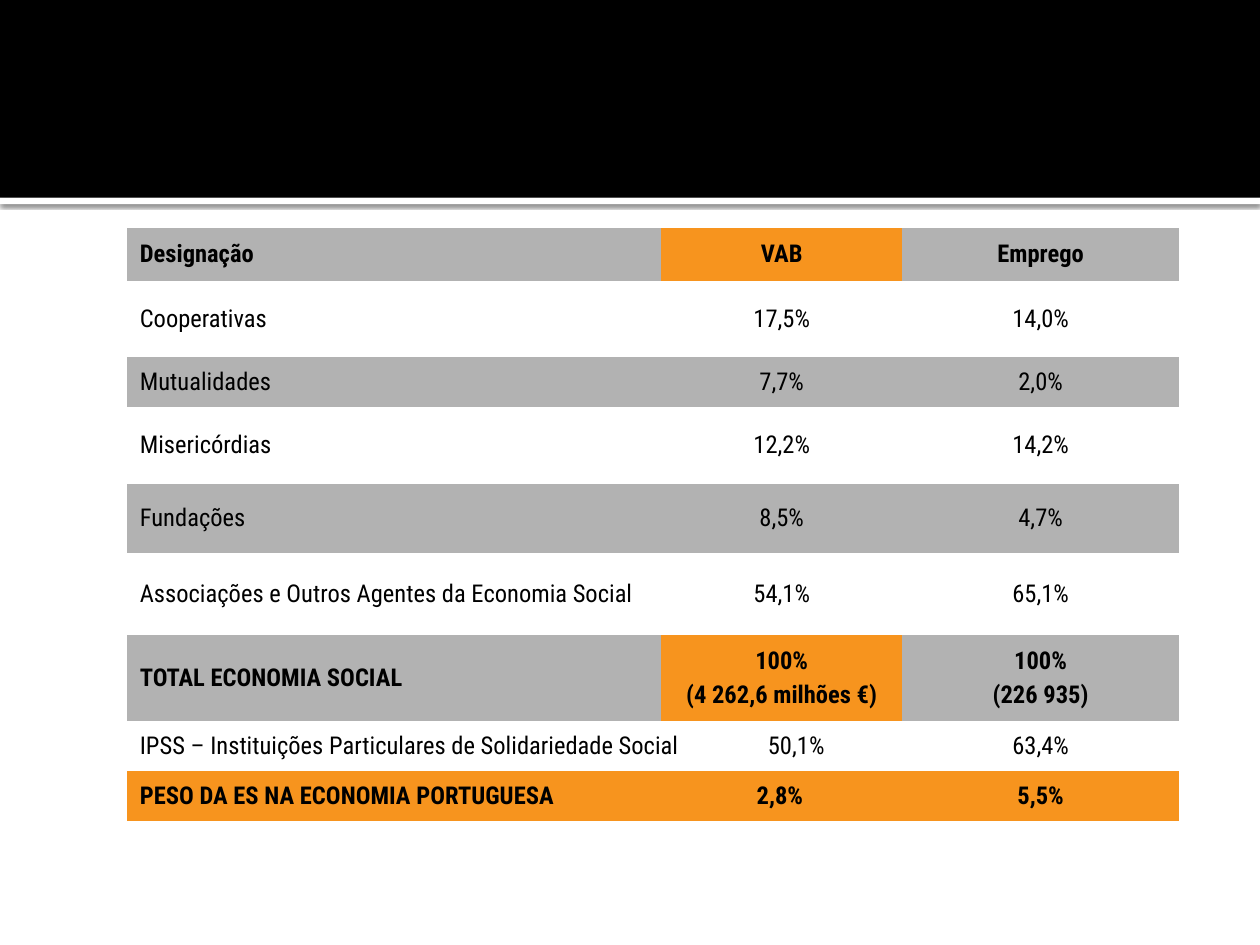
from pptx import Presentation
from pptx.dml.color import RGBColor
from pptx.enum.shapes import MSO_SHAPE
from pptx.enum.text import MSO_ANCHOR, PP_ALIGN
from pptx.oxml import parse_xml
from pptx.oxml.ns import nsdecls, qn
from pptx.util import Inches, Pt

BLACK = RGBColor(0x00, 0x00, 0x00)
WHITE = RGBColor(0xFF, 0xFF, 0xFF)
GRAY = RGBColor(0xB2, 0xB2, 0xB2)
ORANGE = RGBColor(0xF7, 0x94, 0x1E)

NO_STYLE = "{2D5ABB26-0587-4C30-8999-92F81FD0307C}"
COLS = [4.24, 1.91, 2.2]
PLAIN = {"size": Pt(14), "name": "Roboto Condensed", "bold": False}
BOLD = {**PLAIN, "bold": True}

# Row height, cell texts, cell fills, font
ROWS = [
    (0.42, ["Designação", "VAB", "Emprego"], [GRAY, ORANGE, GRAY], BOLD),
    (0.6, ["Cooperativas", "17,5%", "14,0%"], [WHITE] * 3, PLAIN),
    (0.4, ["Mutualidades", "7,7%", "2,0%"], [GRAY] * 3, PLAIN),
    (0.61, ["Misericórdias", "12,2%", "14,2%"], [WHITE] * 3, PLAIN),
    (0.55, ["Fundações", "8,5%", "4,7%"], [GRAY] * 3, PLAIN),
    (0.65, ["Associações e Outros Agentes da Economia Social", "54,1%", "65,1%"],
     [WHITE] * 3, PLAIN),
    (0.68, ["TOTAL ECONOMIA SOCIAL", "100%\n(4 262,6 milhões €)", "100%\n(226 935)"],
     [GRAY, ORANGE, GRAY], BOLD),
    (0.4, ["IPSS – Instituições Particulares de Solidariedade Social\t50,1%", None, "63,4%"],
     [None] * 3, PLAIN),
    (0.4, ["PESO DA ES NA ECONOMIA PORTUGUESA\t2,8%", None, "5,5%"], [ORANGE] * 3, BOLD),
    (0.4, ["", None, ""], [None] * 3, PLAIN),
]
# Centre of the VAB figure in the merged rows, from the text edge
TABS = {7: 5.21, 8: 5.08}


def add_bar(s, x, y, w, h, color):
    sp = s.shapes.add_shape(MSO_SHAPE.RECTANGLE, Inches(x), Inches(y), Inches(w), Inches(h))
    sp.shadow.inherit = False
    sp.fill.solid()
    sp.fill.fore_color.rgb = color
    sp.line.fill.background()
    return sp


def add_header(s, x, y, w, h):
    # White rule with a soft shadow under the black band
    rule = add_bar(s, x, y + h, w, 0.05, WHITE)
    effects = rule._element.spPr.find(qn("a:effectLst"))
    effects.append(parse_xml(
        f'<a:outerShdw {nsdecls("a")} blurRad="{Pt(2.5)}" dist="{Pt(0.8)}" dir="5400000" '
        'algn="t" rotWithShape="0"><a:srgbClr val="000000"><a:alpha val="60000"/>'
        '</a:srgbClr></a:outerShdw>'))
    add_bar(s, x, y, w, h, BLACK)


def add_tab(p, pos):
    p._p.get_or_add_pPr().append(parse_xml(
        f'<a:tabLst {nsdecls("a")}><a:tab pos="{Inches(pos)}" algn="ctr"/></a:tabLst>'))


def fill_cell(cell, text, color, font, align, tab):
    cell.vertical_anchor = MSO_ANCHOR.MIDDLE
    if color is None:
        cell.fill.background()
    else:
        cell.fill.solid()
        cell.fill.fore_color.rgb = color
    if not text:
        return
    cell.text = text
    for p in cell.text_frame.paragraphs:
        p.alignment = align
        p.space_before = Pt(2.8)
        if tab:
            add_tab(p, tab)
        for r in p.runs:
            for key, value in font.items():
                setattr(r.font, key, value)
            r.font.color.rgb = BLACK


def add_figures(s, x, y):
    height = sum(row[0] for row in ROWS)
    table = s.shapes.add_table(len(ROWS), len(COLS), Inches(x), Inches(y),
                               Inches(sum(COLS)), Inches(height)).table
    table.first_row = table.horz_banding = False
    table._tbl.tblPr.find(qn("a:tableStyleId")).text = NO_STYLE
    for col, width in zip(table.columns, COLS):
        col.width = Inches(width)
    for i, (row_height, texts, colors, font) in enumerate(ROWS):
        table.rows[i].height = Inches(row_height)
        for j, (text, color) in enumerate(zip(texts, colors)):
            align = PP_ALIGN.CENTER if j else PP_ALIGN.LEFT
            tab = None if j else TABS.get(i)
            fill_cell(table.cell(i, j), text, color, font, align, tab)
        # Label and VAB share one cell
        if texts[1] is None:
            table.cell(i, 0).merge(table.cell(i, 1))


def main():
    prs = Presentation()
    prs.slide_width, prs.slide_height = Inches(10), Inches(7.5)
    s = prs.slides.add_slide(prs.slide_layouts[6])
    add_header(s, 0, 0, 10, 1.57)
    add_figures(s, 1.01, 1.81)
    prs.save("out.pptx")


if __name__ == "__main__":
    main()
